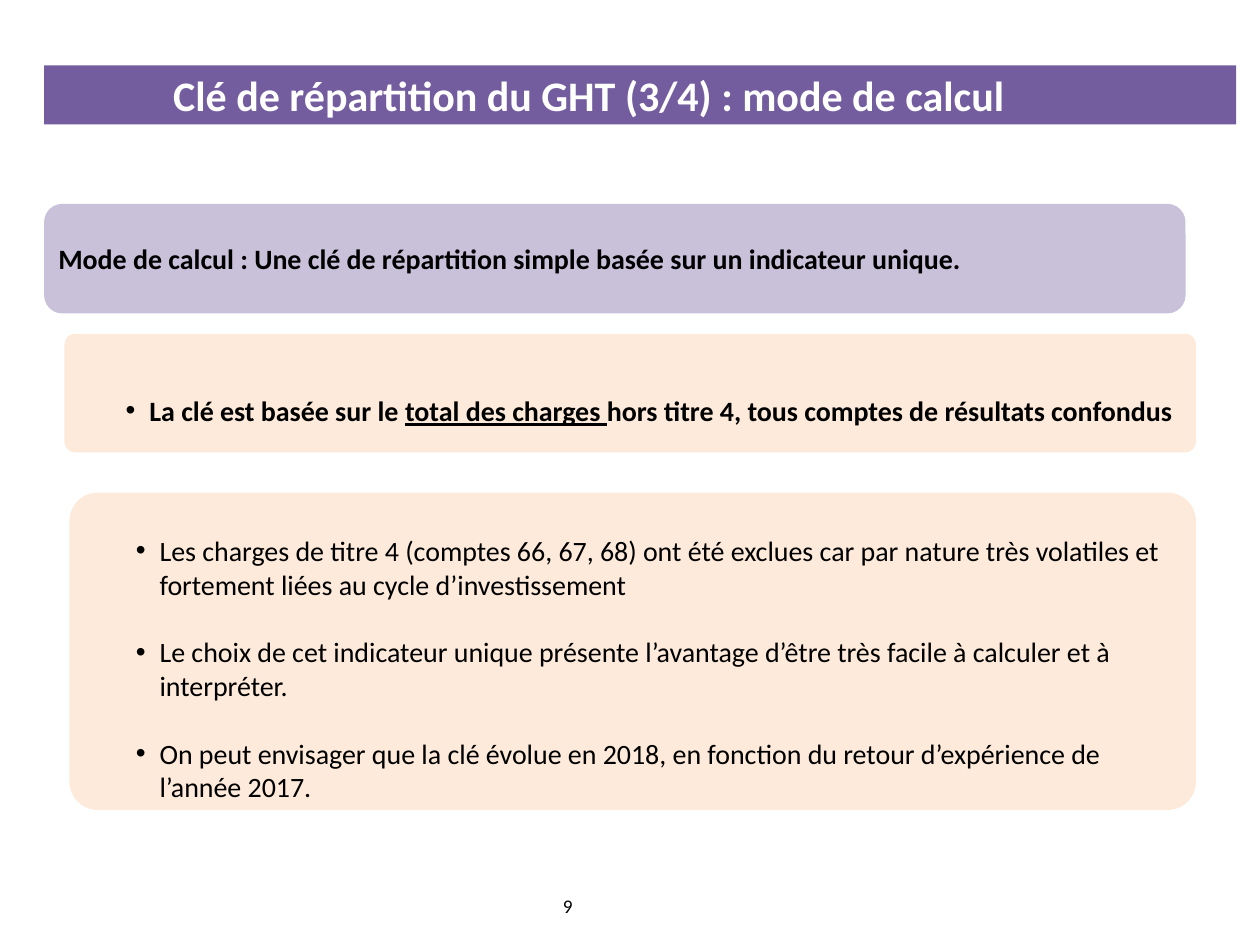
from pptx import Presentation
from pptx.dml.color import RGBColor
from pptx.enum.shapes import MSO_SHAPE as Shape
from pptx.enum.text import MSO_ANCHOR as Anchor, MSO_AUTO_SIZE as AutoSize, PP_ALIGN as Align
from pptx.util import Cm, Pt

PURPLE = RGBColor(0x73, 0x5D, 0x9F)
LAVENDER = RGBColor(0xC9, 0xC0, 0xDA)
PEACH = RGBColor(0xFD, 0xEA, 0xDA)
WHITE = RGBColor(0xFF, 0xFF, 0xFF)
BLACK = RGBColor(0, 0, 0)

LINE = 19.5
ROUNDING = 0.09
KEY_BOX = (1.3, 6.73, 22.81, 2.39)
REASONS_BOX = (1.4, 9.93, 22.71, 6.4)

KEY = [[("La clé est basée sur le ", False),
        ("total des charges ", True),
        ("hors titre 4, tous comptes de résultats confondus", False)]]
REASONS = [[(text, False)] for text in (
    "Les charges de titre 4 (comptes 66, 67, 68) ont été exclues car par nature "
    "très volatiles et fortement liées au cycle d’investissement",
    "Le choix de cet indicateur unique présente l’avantage d’être très facile "
    "à calculer et à interpréter.",
    "On peut envisager que la clé évolue en 2018, en fonction du retour "
    "d’expérience de l’année 2017.")]


def apply(target, **values):
    """Set each given attribute on the target."""
    for name, value in values.items():
        setattr(target, name, value)


def place(sp, box):
    """Move and size a shape, in centimetres."""
    apply(sp, **dict(zip(("left", "top", "width", "height"), map(Cm, box))))


def set_frame(sp, left=0.18, top=0.1):
    """Give a text frame its insets, anchor and wrapping."""
    tf = sp.text_frame
    apply(tf, margin_left=Cm(left), margin_top=Cm(top), margin_right=Cm(0.18),
          margin_bottom=Cm(0.1), vertical_anchor=Anchor.MIDDLE,
          word_wrap=True, auto_size=AutoSize.NONE)
    return tf


def add_run(p, text, size=16, color=BLACK, **values):
    """Add a formatted run to a paragraph."""
    r = p.add_run()
    r.text = text
    apply(r.font, name="Calibri", size=Pt(size), **values)
    r.font.color.rgb = color


def fill_title(sp, text):
    """Turn the title placeholder into the heading bar."""
    place(sp, (0.89, 1.32, 24.03, 1.19))
    sp.fill.solid()
    sp.fill.fore_color.rgb = PURPLE
    p = set_frame(sp, left=2.6).paragraphs[0]
    p.alignment = Align.LEFT
    add_run(p, text, 24, WHITE, bold=True)


def add_panel(s, box, color, rounding=None):
    """Add a rounded panel behind the placeholders."""
    sp = s.shapes.add_shape(Shape.ROUNDED_RECTANGLE, *map(Cm, box))
    sp.shadow.inherit = False
    sp.fill.solid()
    sp.fill.fore_color.rgb = color
    sp.line.fill.background()
    if rounding:
        sp.adjustments[0] = rounding
    s.shapes.title._element.addprevious(sp._element)
    return sp


def fill_list(sp, box, items, bold):
    """Fill a body placeholder with bulleted items of (text, underline) runs."""
    place(sp, box)
    corner = 0.29 * ROUNDING * box[3]
    tf = set_frame(sp, left=0.18 + corner, top=0.1 + Pt(LINE).cm)
    for i, runs in enumerate(items):
        p = tf.add_paragraph() if i else tf.paragraphs[0]
        pPr = p._p.get_or_add_pPr()
        pPr.set("marL", str(Cm(1.47)))
        pPr.set("indent", str(Cm(-0.48)))
        apply(p, alignment=Align.LEFT, space_before=Pt(LINE if i else 0))
        for text, underline in runs:
            add_run(p, text, bold=bold, underline=underline)


def add_page_number(s, text):
    """Add the page number at the foot of the slide."""
    sp = s.shapes.add_textbox(Cm(11.1), Cm(17.91), Cm(5.92), Cm(1.02))
    sp.text_frame.word_wrap = True
    add_run(sp.text_frame.paragraphs[0], text, 11)


def main():
    """Build the slide and save it."""
    prs = Presentation()
    apply(prs, slide_width=Cm(25.4), slide_height=Cm(19.05))
    s = prs.slides.add_slide(prs.slide_layouts.get_by_name("Two Content"))
    title, key, reasons = s.placeholders
    fill_title(title, "Clé de répartition du GHT (3/4) : mode de calcul")
    method = add_panel(s, (0.89, 4.11, 23.01, 2.21), LAVENDER)
    p = set_frame(method).paragraphs[0]
    p.alignment = Align.JUSTIFY
    add_run(p, "Mode de calcul : Une clé de répartition simple basée sur un "
               "indicateur unique.", bold=True)
    for sp, box, items, bold in ((key, KEY_BOX, KEY, True),
                                 (reasons, REASONS_BOX, REASONS, False)):
        add_panel(s, box, PEACH, ROUNDING)
        fill_list(sp, box, items, bold)
    add_page_number(s, "9")
    prs.save("out.pptx")


if __name__ == "__main__":
    main()
